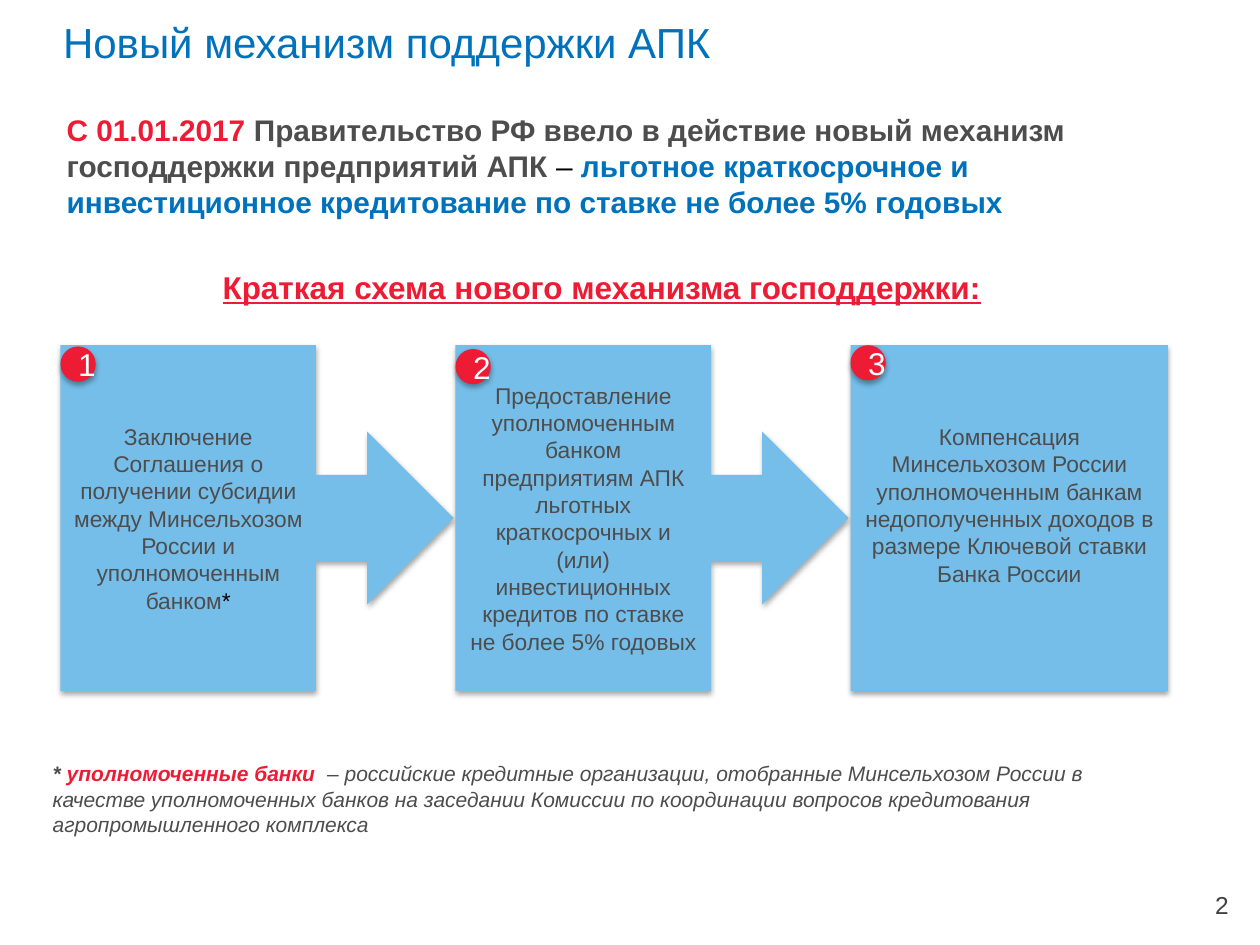
from lxml import etree
from pptx import Presentation
from pptx.dml.color import RGBColor
from pptx.enum.shapes import MSO_SHAPE
from pptx.enum.text import MSO_ANCHOR, PP_ALIGN
from pptx.oxml.ns import qn
from pptx.util import Inches, Pt

LEFT, CENTER, RIGHT = PP_ALIGN.LEFT, PP_ALIGN.CENTER, PP_ALIGN.RIGHT
TOP, MIDDLE = MSO_ANCHOR.TOP, MSO_ANCHOR.MIDDLE
CALLOUT, RECT = MSO_SHAPE.RIGHT_ARROW_CALLOUT, MSO_SHAPE.RECTANGLE
BADGE = MSO_SHAPE.FLOWCHART_CONNECTOR

FONT = "Arial"
COLORS = {"blue": "0072BC", "sky": "75BEE9", "red": "ED1B34", "text": "4D4D4D",
          "number": "404040", "black": "000000", "white": "FFFFFF"}

# The slide is a grid of 100 columns by 100 rows; boxes are (x, y, w, h) in it.
WIDTH, HEIGHT = Inches(10), Inches(7.5)
COL, ROW = WIDTH / 100, HEIGHT / 100

# Step text runs, and how many rows the badge sits below the step's top.
STEPS = [
    ([("Заключение Соглашения о получении субсидии между Минсельхозом России "
       "и уполномоченным банком", "text"), ("*", "black")], 0.13),
    ([("Предоставление уполномоченным банком предприятиям АПК льготных "
       "краткосрочных и (или) инвестиционных кредитов по ставке не более "
       "5% годовых", "text")], 0.4),
    ([("Компенсация Минсельхозом России уполномоченным банкам недополученных "
       "доходов в размере Ключевой ставки Банка России", "text")], 0),
]


def rgb(name):
    return RGBColor.from_string(COLORS[name])


def to_emu(box):
    x, y, w, h = box
    return round(x * COL), round(y * ROW), round(w * COL), round(h * ROW)


def write(tf, runs, size, align=LEFT, anchor=TOP):
    """Fill a text frame with (text, colour, styles) runs; styles is a string of b, i, u."""
    tf.word_wrap = True
    tf.vertical_anchor = anchor
    p = tf.paragraphs[0]
    p.alignment = align
    for text, color, *styles in runs:
        style = styles[0] if styles else ""
        r = p.add_run()
        r.text = text
        r.font.name, r.font.size = FONT, Pt(size)
        r.font.color.rgb = rgb(color)
        r.font.bold, r.font.italic = "b" in style, "i" in style
        r.font.underline = "u" in style


def add_text(s, box, runs, size, **layout):
    write(s.shapes.add_textbox(*to_emu(box)).text_frame, runs, size, **layout)


def add_shadow(sp):
    sp.shadow.inherit = False
    effects = sp._element.spPr.find(qn("a:effectLst"))
    shadow = etree.SubElement(effects, qn("a:outerShdw"), blurRad=str(Pt(3.1)),
                              dist=str(Pt(1.8)), dir="5400000", rotWithShape="0")
    color = etree.SubElement(shadow, qn("a:srgbClr"), val=COLORS["black"])
    etree.SubElement(color, qn("a:alpha"), val="35000")


def add_block(s, kind, box, fill, runs, size):
    sp = s.shapes.add_shape(kind, *to_emu(box))
    sp.fill.solid()
    sp.fill.fore_color.rgb = rgb(fill)
    sp.line.fill.background()
    add_shadow(sp)
    write(sp.text_frame, runs, size, align=CENTER, anchor=MIDDLE)
    return sp


def add_title(s, box):
    title = s.shapes.title
    title.left, title.top, title.width, title.height = to_emu(box)
    tf = title.text_frame
    tf.margin_left = tf.margin_top = tf.margin_right = tf.margin_bottom = 0
    write(tf, [("Новый механизм поддержки АПК", "blue")], 24)


def add_intro(s, box):
    add_text(s, box, [
        ("С 01.01.2017 ", "red", "b"),
        ("Правительство РФ ввело в действие новый механизм господдержки "
         "предприятий АПК ", "text", "b"),
        ("– ", "black"),
        ("льготное краткосрочное и инвестиционное кредитование по ставке "
         "не более 5% годовых", "blue", "b")], 17)


def add_flow(s, box):
    """Two arrow callouts lead to a closing rectangle; a numbered badge marks each."""
    x, y, w, h = box
    last_w = 25.2
    pitch = (w - last_w) / (len(STEPS) - 1)
    badge_w = 2.8
    badge_h = badge_w * COL / ROW
    for i, (runs, _) in enumerate(STEPS):
        last = i == len(STEPS) - 1
        kind, step_w = (RECT, last_w) if last else (CALLOUT, pitch - 0.15)
        sp = add_block(s, kind, (x + i * pitch, y, step_w, h), "sky", runs, 13)
        if last:
            sp.text_frame.margin_bottom = Inches(0.26)
    for i, (_, drop) in enumerate(STEPS):
        add_block(s, BADGE, (x + i * pitch, y + drop, badge_w, badge_h), "red",
                  [(str(i + 1), "white")], 18)


def add_footnote(s, box):
    add_text(s, box, [
        ("* ", "text", "bi"),
        ("уполномоченные банки  ", "red", "bi"),
        ("– российские кредитные организации, отобранные Минсельхозом России "
         "в качестве уполномоченных банков на заседании Комиссии по координации "
         "вопросов кредитования агропромышленного комплекса", "text", "i")], 12)


def main():
    prs = Presentation()
    prs.slide_width, prs.slide_height = WIDTH, HEIGHT
    s = prs.slides.add_slide(prs.slide_layouts.get_by_name("Title Only"))
    add_title(s, (5, 1.73, 84.4, 12.67))
    add_intro(s, (4.3, 11.2, 90.6, 12.8))
    add_text(s, (2.8, 27.73, 89.9, 5.33),
             [("Краткая схема нового механизма господдержки:", "red", "bu")],
             18, align=CENTER)
    add_flow(s, (4.8, 36.53, 87.9, 36.6))
    add_footnote(s, (3.2, 79.87, 87.7, 9.47))
    add_text(s, (75.2, 93.07, 23.3, 5.33), [("2", "number")], 14,
             align=RIGHT, anchor=MIDDLE)
    prs.save("out.pptx")


if __name__ == "__main__":
    main()
